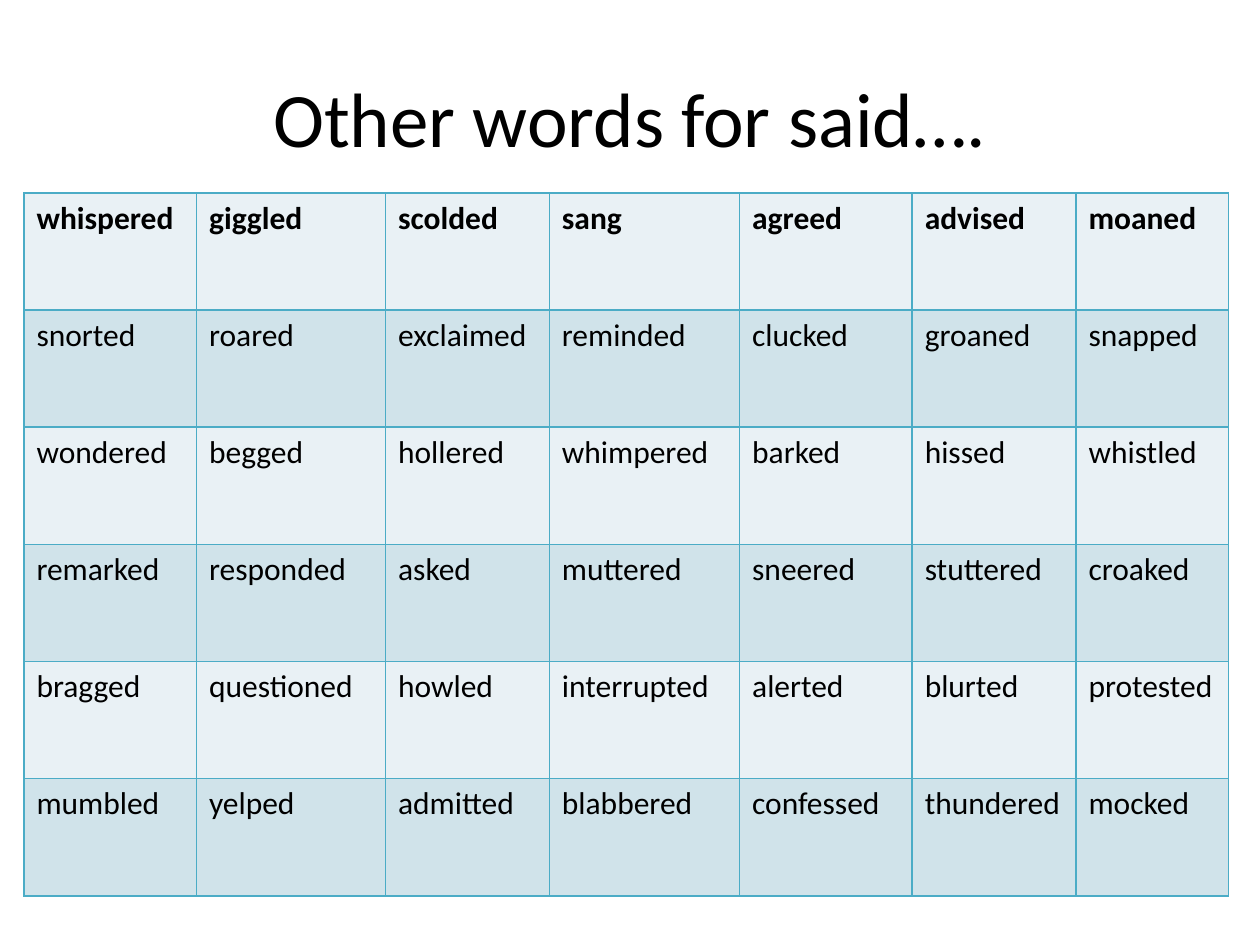
from lxml import etree
from pptx import Presentation
from pptx.dml.color import RGBColor
from pptx.enum import text
from pptx.oxml import ns
from pptx.util import Inches, Pt

BLACK = RGBColor(0x00, 0x00, 0x00)
TEAL = RGBColor(0x4B, 0xAC, 0xC6)
PALE_BLUE = RGBColor(0xE9, 0xF1, 0xF5)
LIGHT_BLUE = RGBColor(0xD0, 0xE3, 0xEA)

COLUMN_WIDTHS = [1.37, 1.5, 1.3, 1.51, 1.37, 1.3, 1.21]
ROW_HEIGHT = 0.93
WORDS = [
    ["whispered", "giggled", "scolded", "sang", "agreed", "advised", "moaned"],
    ["snorted", "roared", "exclaimed", "reminded", "clucked", "groaned", "snapped"],
    ["wondered", "begged", "hollered", "whimpered", "barked", "hissed", "whistled"],
    ["remarked", "responded", "asked", "muttered", "sneered", "stuttered", "croaked"],
    ["bragged", "questioned", "howled", "interrupted", "alerted", "blurted", "protested"],
    ["mumbled", "yelped", "admitted", "blabbered", "confessed", "thundered", "mocked"],
]


class SlideBuilder:
    font_name = "Calibri"
    title_size = Pt(44)
    cell_size = Pt(18)
    border_width = Pt(1)

    def __init__(self, slide):
        self.slide = slide

    def format_text(self, text_frame, size, bold=False):
        for paragraph in text_frame.paragraphs:
            for run in paragraph.runs:
                run.font.name = self.font_name
                run.font.size = size
                run.font.bold = bold
                run.font.color.rgb = BLACK

    def add_title(self, wording, left, top, width, height):
        title = self.slide.shapes.title
        title.left, title.top = Inches(left), Inches(top)
        title.width, title.height = Inches(width), Inches(height)
        text_frame = title.text_frame
        text_frame.text = wording
        text_frame.vertical_anchor = text.MSO_ANCHOR.MIDDLE
        text_frame.paragraphs[0].alignment = text.PP_ALIGN.CENTER
        self.format_text(text_frame, self.title_size)

    def add_borders(self, cell):
        properties = cell._tc.get_or_add_tcPr()
        for side in ("a:lnL", "a:lnR", "a:lnT", "a:lnB"):
            line = etree.SubElement(properties, ns.qn(side), w=str(self.border_width))
            fill = etree.SubElement(line, ns.qn("a:solidFill"))
            etree.SubElement(fill, ns.qn("a:srgbClr"), val=str(TEAL))

    def add_table(self, rows, left, top, column_widths, row_height):
        table = self.slide.shapes.add_table(
            len(rows), len(column_widths), Inches(left), Inches(top),
            Inches(sum(column_widths)), Inches(row_height * len(rows)),
        ).table
        for column, width in zip(table.columns, column_widths):
            column.width = Inches(width)
        for row_index, words in enumerate(rows):
            table.rows[row_index].height = Inches(row_height)
            for column_index, word in enumerate(words):
                cell = table.cell(row_index, column_index)
                cell.text_frame.text = word
                self.format_text(cell.text_frame, self.cell_size, bold=row_index == 0)
                self.add_borders(cell)
                cell.fill.solid()
                cell.fill.fore_color.rgb = LIGHT_BLUE if row_index % 2 else PALE_BLUE


def main():
    presentation = Presentation()
    presentation.slide_width = Inches(10)
    presentation.slide_height = Inches(7.5)
    slide = presentation.slides.add_slide(presentation.slide_layouts[5])
    builder = SlideBuilder(slide)
    builder.add_title("Other words for said….", 0.5, 0.3, 9, 1.25)
    builder.add_table(WORDS, 0.19, 1.53, COLUMN_WIDTHS, ROW_HEIGHT)
    presentation.save("out.pptx")


if __name__ == "__main__":
    main()
